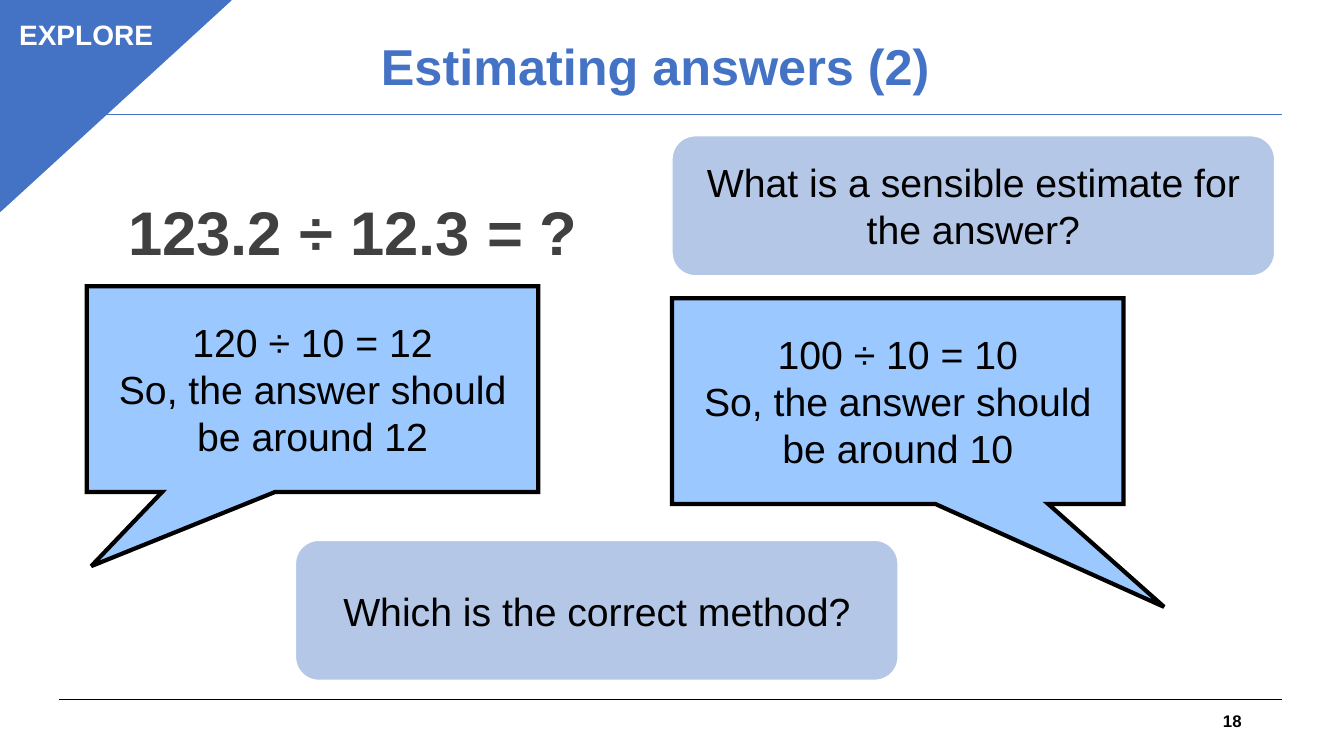
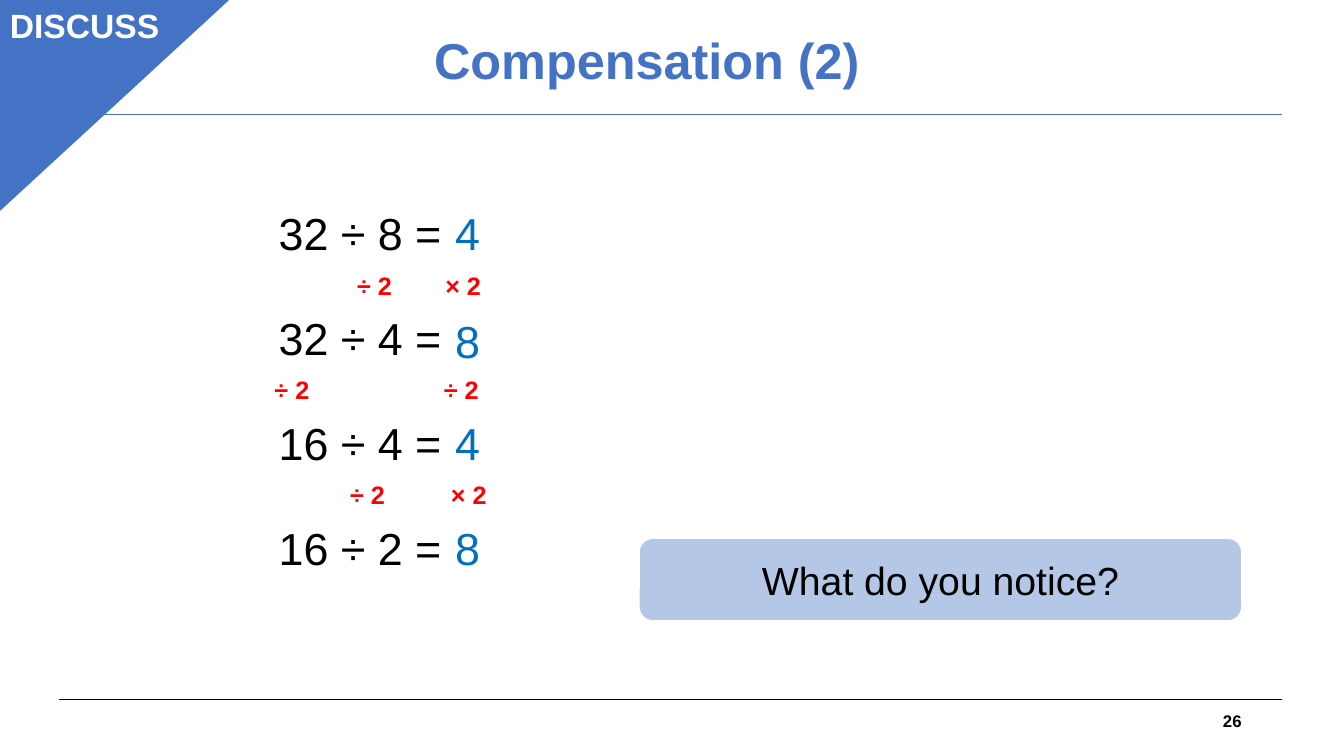
import pptx
import pptx.util
import pptx.dml.color
import pptx.enum.shapes
import pptx.enum.text
import pptx.oxml
import pptx.oxml.ns
import lxml.etree

Pt = pptx.util.Pt
qn = pptx.oxml.ns.qn
Kind = pptx.enum.shapes.MSO_SHAPE
Align = pptx.enum.text.PP_ALIGN
BLUE, BLACK, WHITE = "4472C4", "000000", "FFFFFF"
PALE, SKY, RED, GREY, TEAL = "B4C7E7", "9BC8FF", "FF0000", "404040", "0070C0"


def tint(code):
    return pptx.dml.color.RGBColor.from_string(code)


def write(page, text, *, box, size=28, color=BLACK, bold=False,
          align=Align.LEFT, space=1.0, kind=None, fill=PALE, line=WHITE,
          width=1, tip=None):
    area = [Pt(n) for n in box]
    if kind is None:
        shape = page.shapes.add_textbox(*area)
    else:
        shape = page.shapes.add_shape(kind, *area)
        shape.shadow.inherit = False
        shape.fill.solid()
        shape.fill.fore_color.rgb = tint(fill)
        shape.line.color.rgb = tint(line)
        shape.line.width = Pt(width)
        edge = shape.element.spPr.find(qn("a:ln"))
        lxml.etree.SubElement(edge, qn("a:miter"), lim="800000")
    if tip:
        shape.adjustments[0], shape.adjustments[1] = tip
    frame = shape.text_frame
    frame.word_wrap = True
    frame.vertical_anchor = pptx.enum.text.MSO_ANCHOR.MIDDLE
    frame.text = text
    for para in frame.paragraphs:
        para.alignment = align
        para.line_spacing = space
        font = para.runs[0].font
        font.name = "Arial"
        font.size = Pt(size)
        font.bold = bold
        font.color.rgb = tint(color)


deck = pptx.Presentation()
deck.slide_width, deck.slide_height = Pt(960), Pt(540)

heads = [
    ("Estimating answers (2)", (265, 9.5, 430, 80), "18", (165, 151),
     "EXPLORE", 20, (0, 8.5, 123, 32), Align.CENTER),
    ("Compensation (2)", (303, 5, 331, 80), "26", (163, 150),
     "DISCUSS", 24, (0, 0, 125, 36), Align.LEFT),
]
pages = []
for title, place, num, (wide, high), label, size, spot, align in heads:
    page = deck.slides.add_slide(deck.slide_layouts[6])
    pages.append(page)
    for y, color in ((500, BLACK), (82, BLUE)):
        rule = page.shapes.add_connector(
            pptx.enum.shapes.MSO_CONNECTOR.STRAIGHT,
            Pt(42.5), Pt(y), Pt(916), Pt(y))
        rule.line.color.rgb = tint(color)
        rule.line.width = Pt(0.75)
        lxml.etree.SubElement(rule.element.spPr, qn("a:effectLst"))
    draft = page.shapes.build_freeform(0, 0, scale=Pt(1))
    draft.add_line_segments([(wide, 0), (0, high)], close=True)
    flag = draft.convert_to_shape()
    flag.shadow.inherit = False
    flag.fill.solid()
    flag.fill.fore_color.rgb = tint(BLUE)
    flag.line.color.rgb = tint(BLUE)
    flag.line.width = Pt(1)
    write(page, label, box=spot, size=size, color=WHITE, bold=True,
          align=align)
    write(page, title, box=place, size=36, color=BLUE, bold=True, space=0.9)
    write(page, num, box=(678, 500.5, 216, 29), size=12, bold=True,
          align=Align.RIGHT)

first, second = pages
write(first, "123.2 ÷ 12.3 = ?", box=(84.5, 136, 380, 58), size=44,
      color=GREY, bold=True)

cards = [
    (first, "What is a sensible estimate for the answer?", 480, 97, 100),
    (first, "Which is the correct method?", 211, 386, 100),
    (second, "What do you notice?", 456.5, 384.5, 59),
]
for page, text, x, y, high in cards:
    write(page, text, box=(x, y, 430.5, high), align=Align.CENTER,
          kind=Kind.ROUNDED_RECTANGLE)

views = [
    ("120 ÷ 10 = 12", "12", 62, 204.5, (-0.49, 0.86)),
    ("100 ÷ 10 = 10", "10", 480, 213, (0.59, 1)),
]
for sum_, guess, x, y, tip in views:
    write(first, f"{sum_}\nSo, the answer should be around {guess}",
          box=(x, y, 322.5, 147), align=Align.CENTER,
          kind=Kind.RECTANGULAR_CALLOUT, fill=SKY, line=BLACK, width=3,
          tip=tip)

steps = [
    ("32 ÷ 8 =", "4", 0, [("÷ 2", 248), ("× 2", 311)]),
    ("32 ÷ 4 =", "8", 2.5, [("÷ 2", 189), ("÷ 2", 310)]),
    ("16 ÷ 4 =", "4", 0, [("÷ 2", 243), ("× 2", 315)]),
    ("16 ÷ 2 =", "8", 0, []),
]
for i, (sum_, value, drop, notes) in enumerate(steps):
    y = 143 + 75 * i
    write(second, sum_, box=(192, y, 141, 46), size=32)
    write(second, value, box=(318, y + drop, 40, 46), size=32, color=TEAL)
    for note, x in notes:
        write(second, note, box=(x, y + 46, 50, 29), size=18, color=RED,
              bold=True)

deck.save("out.pptx")
